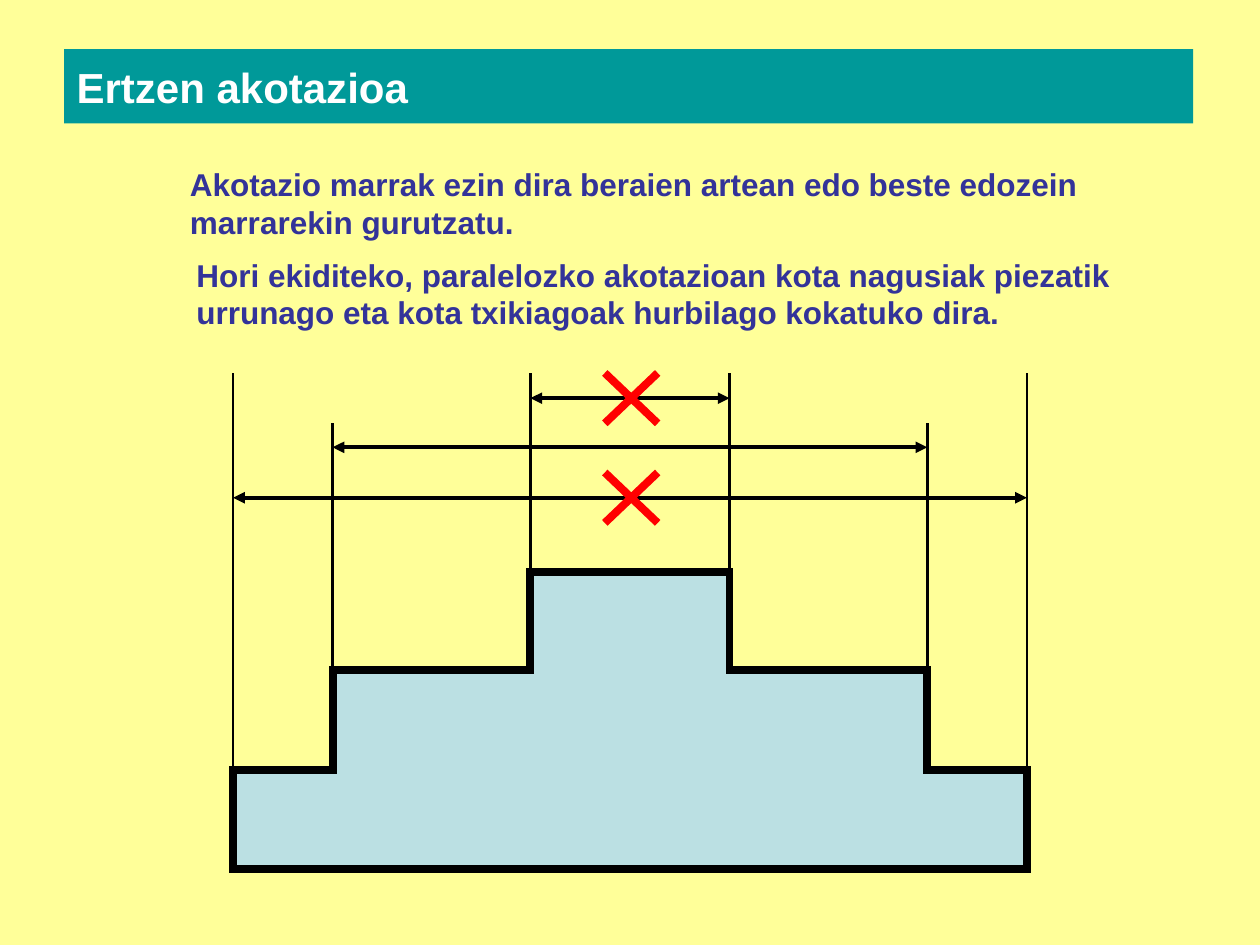
from dataclasses import dataclass

from lxml import etree
from pptx import Presentation
from pptx.dml.color import RGBColor
from pptx.enum.shapes import MSO_CONNECTOR, MSO_SHAPE
from pptx.enum.text import MSO_ANCHOR, PP_ALIGN
from pptx.oxml.ns import qn
from pptx.util import Inches, Pt

STRAIGHT = MSO_CONNECTOR.STRAIGHT
RECTANGLE = MSO_SHAPE.RECTANGLE
TOP, MIDDLE = MSO_ANCHOR.TOP, MSO_ANCHOR.MIDDLE
LEFT = PP_ALIGN.LEFT

CREAM = RGBColor(0xFF, 0xFF, 0x99)
TEAL = RGBColor(0x00, 0x99, 0x99)
PALE_BLUE = RGBColor(0xBB, 0xE0, 0xE3)
INDIGO = RGBColor(0x33, 0x33, 0x99)
WHITE = RGBColor(0xFF, 0xFF, 0xFF)
BLACK = RGBColor(0x00, 0x00, 0x00)
RED = RGBColor(0xFF, 0x00, 0x00)

FONT = "Arial"
CENTRE = 5.0
PIECE_BOTTOM = 6.9
CROSS_CENTRE, CROSS_WIDTH, CROSS_HEIGHT = 5.01, 0.42, 0.4


@dataclass(frozen=True)
class Step:
    """One tier of the piece with its dimension line, in inches."""
    half_width: float
    top: float
    extension_top: float
    dimension_y: float
    crossed_out: bool

    @property
    def left(self) -> float:
        return CENTRE - self.half_width

    @property
    def right(self) -> float:
        return CENTRE + self.half_width


@dataclass(frozen=True)
class Note:
    text: str
    left: float
    top: float
    width: float
    height: float = 0.71


STEPS = [
    Step(3.15, 6.11, 2.96, 3.95, True),
    Step(2.36, 5.32, 3.36, 3.55, False),
    Step(0.79, 4.54, 2.96, 3.16, True),
]

NOTES = [
    Note("Akotazio marrak ezin dira beraien artean edo beste edozein "
         "marrarekin gurutzatu.", 1.41, 1.26, 7.93),
    Note("Hori ekiditeko, paralelozko akotazioan kota nagusiak piezatik "
         "urrunago eta kota txikiagoak hurbilago kokatuko dira.",
         1.46, 1.98, 7.88),
]


def write_text(shape, text: str, *, size: float, color: RGBColor,
               anchor=TOP) -> None:
    frame = shape.text_frame
    frame.word_wrap = True
    frame.vertical_anchor = anchor
    paragraph = frame.paragraphs[0]
    paragraph.alignment = LEFT
    run = paragraph.add_run()
    run.text = text
    run.font.name = FONT
    run.font.size = Pt(size)
    run.font.bold = True
    run.font.color.rgb = color


def draw_line(slide, start: tuple[float, float], end: tuple[float, float], *,
              color: RGBColor = BLACK, width: float = 1.5,
              arrows: bool = False) -> None:
    line = slide.shapes.add_connector(
        STRAIGHT, *(Inches(value) for value in (*start, *end)))
    line.line.color.rgb = color
    line.line.width = Pt(width)
    if arrows:
        outline = line.line._get_or_add_ln()
        for tag in ("a:headEnd", "a:tailEnd"):
            etree.SubElement(outline, qn(tag), type="triangle")
    etree.SubElement(line._element.spPr, qn("a:effectLst"))


def draw_piece(slide) -> None:
    """Draw the stepped outline, up the left side and down the right."""
    floor = PIECE_BOTTOM
    left_side, right_side = [], []
    for step in STEPS:
        left_side += [(step.left, floor), (step.left, step.top)]
        right_side += [(step.right, floor), (step.right, step.top)]
        floor = step.top
    corners = [(Inches(x), Inches(y)) for x, y in left_side + right_side[::-1]]
    builder = slide.shapes.build_freeform(*corners[0], scale=1.0)
    builder.add_line_segments(corners[1:], close=True)
    piece = builder.convert_to_shape()
    piece.shadow.inherit = False
    piece.fill.solid()
    piece.fill.fore_color.rgb = PALE_BLUE
    piece.line.color.rgb = BLACK
    piece.line.width = Pt(4.5)
    etree.SubElement(piece.line._get_or_add_ln(), qn("a:miter"), lim="800000")


def draw_cross(slide, y: float) -> None:
    left, right = CROSS_CENTRE - CROSS_WIDTH / 2, CROSS_CENTRE + CROSS_WIDTH / 2
    top, bottom = y - CROSS_HEIGHT / 2, y + CROSS_HEIGHT / 2
    for start_x, end_x in ((left, right), (right, left)):
        draw_line(slide, (start_x, top), (end_x, bottom), color=RED, width=4.5)


def draw_heading(slide) -> None:
    heading = slide.shapes.add_shape(
        RECTANGLE, Inches(0.51), Inches(0.39), Inches(8.96), Inches(0.59))
    heading.shadow.inherit = False
    heading.fill.solid()
    heading.fill.fore_color.rgb = TEAL
    heading.line.fill.background()
    write_text(heading, "Ertzen akotazioa", size=24, color=WHITE, anchor=MIDDLE)


def draw_note(slide, note: Note) -> None:
    box = slide.shapes.add_textbox(Inches(note.left), Inches(note.top),
                                   Inches(note.width), Inches(note.height))
    write_text(box, note.text, size=18, color=INDIGO)


def main() -> None:
    presentation = Presentation()
    presentation.slide_width = Inches(10)
    presentation.slide_height = Inches(7.5)
    slide = presentation.slides.add_slide(presentation.slide_layouts[6])
    slide.background.fill.solid()
    slide.background.fill.fore_color.rgb = CREAM

    draw_piece(slide)
    for step in STEPS:
        for x in (step.left, step.right):
            draw_line(slide, (x, step.top), (x, step.extension_top))
    for step in STEPS:
        draw_line(slide, (step.left, step.dimension_y),
                  (step.right, step.dimension_y), width=2.25, arrows=True)
    for step in STEPS:
        if step.crossed_out:
            draw_cross(slide, step.dimension_y)
    draw_heading(slide)
    for note in NOTES:
        draw_note(slide, note)
    presentation.save("out.pptx")


if __name__ == "__main__":
    main()
